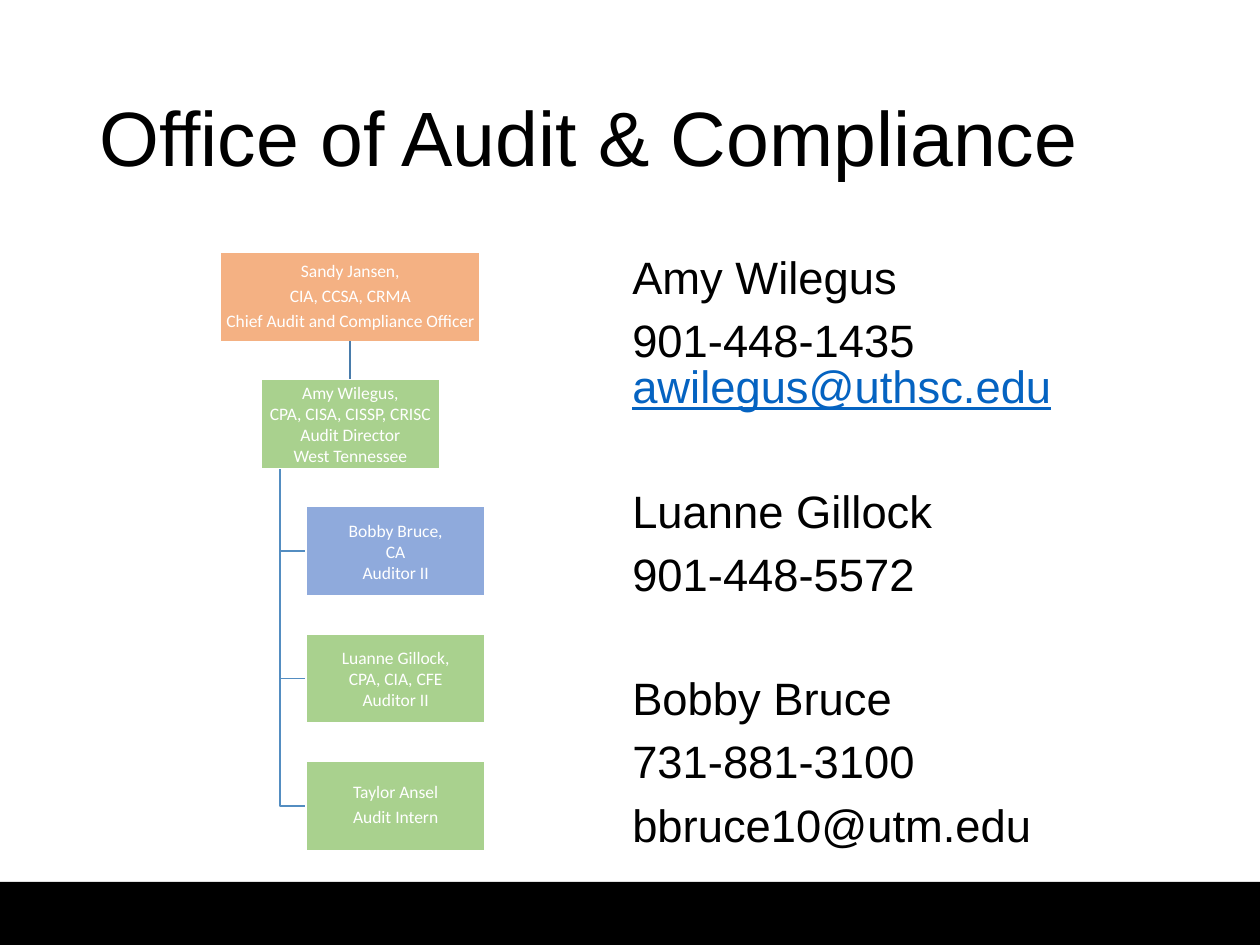
from dataclasses import dataclass

from pptx import Presentation
from pptx import util as u
from pptx.dml.color import RGBColor
from pptx.enum import shapes, text
from pptx.oxml.ns import qn
from lxml import etree


@dataclass(frozen=True)
class Theme:
    black: str = "000000"
    white: str = "FFFFFF"
    link: str = "0563C1"
    chief: str = "F4B183"
    west: str = "A9D18E"
    martin: str = "8FAADC"
    trunk: str = "497CAB"
    branch: str = "538DC1"
    heading_font: str = "Arial"
    chart_font: str = "Calibri"
    title_size: float = 44
    body_size: float = 25.9
    box_size: float = 10


@dataclass(frozen=True)
class Post:
    row: int
    left: float
    width: float
    fill: str
    lines: tuple
    spaced: bool = False


T = Theme()
WIDTH, HEIGHT = 10, 7.5
TOP, ROW, BOX_H = 2, 1.01, 0.71
STAFF_LEFT, STAFF_W, TRUNK_X = 2.43, 1.42, 2.22

CHIEF = Post(0, 1.75, 2.06, T.chief,
             ("Sandy Jansen,", "CIA, CCSA, CRMA", "Chief Audit and Compliance Officer"), True)
DIRECTOR = Post(1, 2.07, STAFF_W, T.west,
                ("Amy Wilegus,", "CPA, CISA, CISSP, CRISC", "Audit Director", "West Tennessee"))
STAFF = (
    Post(2, STAFF_LEFT, STAFF_W, T.martin, ("Bobby Bruce,", "CA", "Auditor II")),
    Post(3, STAFF_LEFT, STAFF_W, T.west, ("Luanne Gillock,", "CPA, CIA, CFE", "Auditor II")),
    Post(4, STAFF_LEFT, STAFF_W, T.west, ("Taylor Ansel", "Audit Intern"), True),
)
CONTACTS = (
    ("Amy Wilegus", "901-448-1435 "),
    ("Luanne Gillock", "901-448-5572"),
    ("Bobby Bruce", "731-881-3100", "bbruce10@utm.edu"),
)
EMAIL = "awilegus@uthsc.edu"


def rgb(color: str) -> RGBColor:
    return RGBColor.from_string(color)


def row_top(row: int) -> float:
    return TOP + row * ROW


def add_run(p, words: str, *, size: float, font: str, color: str, underline: bool = False):
    r = p.add_run()
    r.text = words
    r.font.size, r.font.name = u.Pt(size), font
    r.font.color.rgb = rgb(color)
    if underline:
        r.font.underline = True
    return r


def write(tf, lines, *, size: float, font: str, color: str, align=text.PP_ALIGN.LEFT,
          anchor=text.MSO_ANCHOR.TOP, inset: float | None = None, spacing: float = 1.0,
          before=(), after: float = 0) -> list:
    tf.word_wrap = True
    tf.vertical_anchor = anchor
    if inset is not None:
        tf.margin_left = tf.margin_right = tf.margin_top = tf.margin_bottom = u.Inches(inset)
    paragraphs = []
    for i, line in enumerate(lines):
        p = tf.add_paragraph() if i else tf.paragraphs[0]
        p.alignment, p.line_spacing = align, spacing
        p.space_before = u.Pt(before[i] if before else 0)
        p.space_after = u.Pt(after)
        add_run(p, line, size=size, font=font, color=color)
        paragraphs.append(p)
    return paragraphs


def add_rect(s, left: float, top: float, width: float, height: float, fill: str):
    sp = s.shapes.add_shape(shapes.MSO_SHAPE.RECTANGLE, *map(u.Inches, (left, top, width, height)))
    sp.shadow.inherit = False
    sp.fill.solid()
    sp.fill.fore_color.rgb = rgb(fill)
    sp.line.fill.background()
    return sp


def add_post(s, post: Post):
    sp = add_rect(s, post.left, row_top(post.row), post.width, BOX_H, post.fill)
    sp.line.color.rgb, sp.line.width = rgb(T.white), u.Pt(1)
    write(sp.text_frame, post.lines, size=T.box_size, font=T.chart_font, color=T.white,
          align=text.PP_ALIGN.CENTER, anchor=text.MSO_ANCHOR.MIDDLE, inset=0.01,
          spacing=0.9 if post.spaced else 1.0, after=3.5 if post.spaced else 0)
    return sp


def add_branch(s, post: Post) -> None:
    x, y = u.Inches(TRUNK_X), u.Inches(row_top(DIRECTOR.row) + BOX_H)
    middle = u.Inches(row_top(post.row) + BOX_H / 2)
    builder = s.shapes.build_freeform(x, y)
    builder.add_line_segments([(x, middle), (u.Inches(post.left), middle)], close=False)
    sp = builder.convert_to_shape()
    sp.shadow.inherit = False
    sp.fill.background()
    sp.line.color.rgb, sp.line.width = rgb(T.branch), u.Pt(1)


def join(s, upper, lower) -> None:
    c = s.shapes.add_connector(shapes.MSO_CONNECTOR.STRAIGHT, 0, 0, 0, 0)
    c.begin_connect(upper, 2)
    c.end_connect(lower, 0)
    c.line.color.rgb, c.line.width = rgb(T.trunk), u.Pt(1)
    etree.SubElement(c._element.spPr, qn("a:effectLst"))


def add_textbox(s, left: float, top: float, width: float, height: float):
    return s.shapes.add_textbox(*map(u.Inches, (left, top, width, height))).text_frame


def add_contacts(s) -> None:
    lines = [line for group in CONTACTS for line in group]
    before = [45 if i == 0 else 10 for group in CONTACTS for i in range(len(group))]
    before[0] = 0
    tf = add_textbox(s, 4.92, TOP, 4.4, 4.76)
    paragraphs = write(tf, lines, size=T.body_size, font=T.heading_font, color=T.black,
                       spacing=0.84, before=before)
    add_run(paragraphs[1], EMAIL, size=T.body_size, font=T.heading_font, color=T.link,
            underline=True)


def main() -> None:
    """Build the Office of Audit & Compliance slide."""
    prs = Presentation()
    prs.slide_width, prs.slide_height = u.Inches(WIDTH), u.Inches(HEIGHT)
    s = prs.slides.add_slide(prs.slide_layouts[6])
    add_rect(s, 0, HEIGHT - 0.5, WIDTH, 0.5, T.black)
    write(add_textbox(s, 0.69, 0.4, 8.62, 1.45), ["Office of Audit & Compliance"],
          size=T.title_size, font=T.heading_font, color=T.black,
          anchor=text.MSO_ANCHOR.MIDDLE, spacing=0.9)
    for post in reversed(STAFF):
        add_branch(s, post)
    chief, director = add_post(s, CHIEF), add_post(s, DIRECTOR)
    join(s, chief, director)
    for post in STAFF:
        add_post(s, post)
    add_contacts(s)
    prs.save("out.pptx")


if __name__ == "__main__":
    main()
